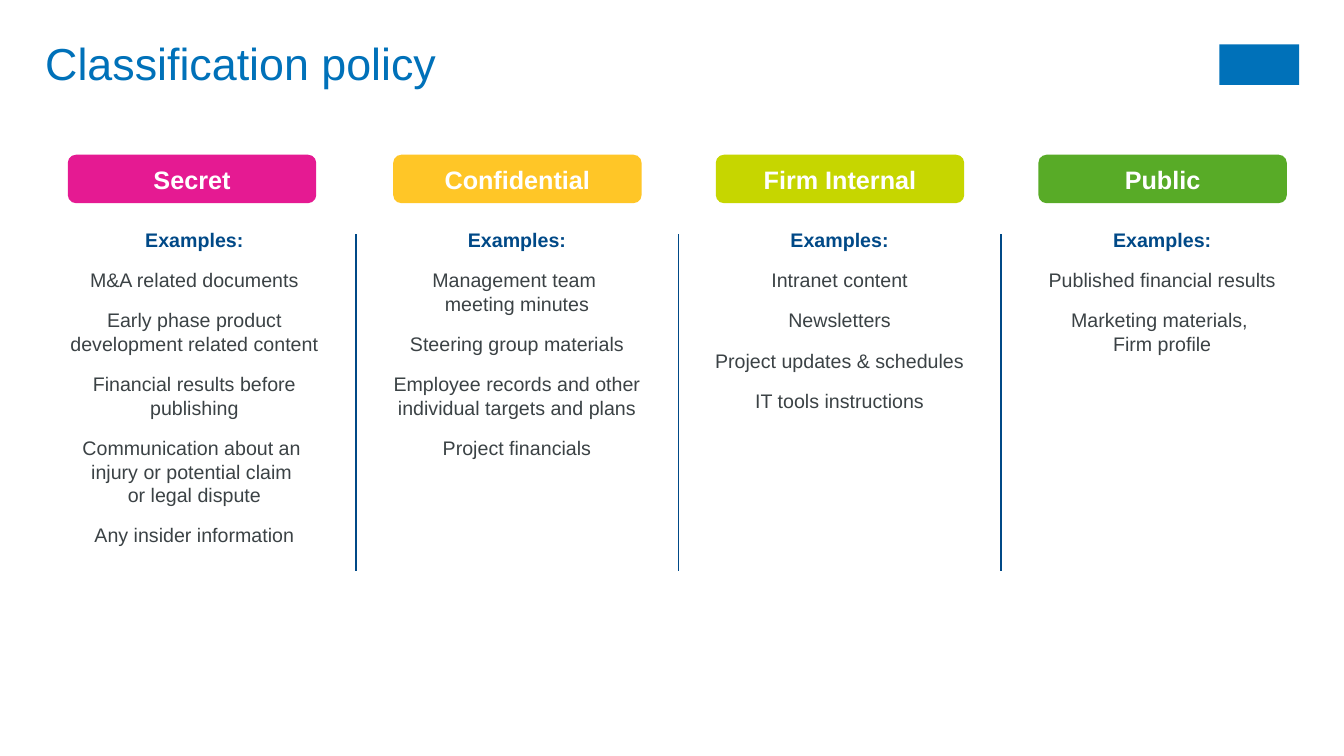
from copy import deepcopy

from lxml.etree import SubElement
from pptx import Presentation
from pptx.dml.color import RGBColor
from pptx.enum.shapes import MSO_CONNECTOR, MSO_SHAPE
from pptx.enum.text import MSO_ANCHOR, PP_ALIGN
from pptx.oxml.ns import qn
from pptx.util import Cm, Pt

COLORS = {
    "title": "0071B9",
    "navy": "004987",
    "text": "3B4245",
    "white": "FFFFFF",
    "secret": "E51A92",
    "confidential": "FFC627",
    "internal": "C6D600",
    "public": "58AB27",
}

# Label, colour, label left edge in cm, examples
CLASSES = [
    ("Secret", "secret", 1.71, [
        "M&A related documents",
        "Early phase product development related content",
        "Financial results before publishing",
        "Communication about an \ninjury or potential claim \nor legal dispute",
        "Any insider information",
    ]),
    ("Confidential", "confidential", 9.91, [
        "Management team \nmeeting minutes",
        "Steering group materials",
        "Employee records and other individual targets and plans",
        "Project financials",
    ]),
    ("Firm Internal", "internal", 18.04, [
        "Intranet content",
        "Newsletters",
        "Project updates & schedules",
        "IT tools instructions",
    ]),
    ("Public", "public", 26.17, [
        "Published financial results",
        "Marketing materials, \nFirm profile",
    ]),
]
COLUMN_LEFT = 1.14
COLUMN_PITCH = 8.13
COLUMN_WIDTH = 7.52
LINE_HEIGHT = 0.6
PARAGRAPH_GAP = 0.42


def color(name):
    return RGBColor.from_string(COLORS[name])


def write(paragraph, text, size, color_name, bold=False):
    paragraph.text = text
    for run in paragraph.runs:
        run.font.name = "Arial"
        run.font.size = Pt(size)
        run.font.bold = bold
        run.font.color.rgb = color(color_name)
    # Line breaks take the size of the text around them
    for line_break in paragraph._p.findall(qn("a:br")):
        line_break.append(deepcopy(paragraph.runs[0]._r.rPr))


presentation = Presentation()
presentation.slide_width = Cm(33.87)
presentation.slide_height = Cm(19.05)
slide = presentation.slides.add_slide(presentation.slide_layouts[6])

# Title
title = slide.shapes.add_textbox(Cm(1.14), Cm(1.12), Cm(28.8), Cm(2.39))
title_frame = title.text_frame
title_frame.word_wrap = True
title_frame.margin_left = title_frame.margin_right = 0
title_frame.margin_top = title_frame.margin_bottom = 0
title_frame.paragraphs[0].line_spacing = 0.85
write(title_frame.paragraphs[0], "Classification policy", 32, "title")

# Plain block in the top right corner
corner_block = slide.shapes.add_shape(
    MSO_SHAPE.RECTANGLE, Cm(30.73), Cm(1.12), Cm(2.01), Cm(1.02))
corner_block.shadow.inherit = False
corner_block.fill.solid()
corner_block.fill.fore_color.rgb = color("title")
corner_block.line.fill.background()

for index, (name, color_name, label_left, examples) in enumerate(CLASSES):
    left = COLUMN_LEFT + index * COLUMN_PITCH

    # Examples
    line_count = 1 + sum(1 + example.count("\n") for example in examples)
    height = line_count * LINE_HEIGHT + len(examples) * PARAGRAPH_GAP
    box = slide.shapes.add_textbox(
        Cm(left), Cm(5.61), Cm(COLUMN_WIDTH), Cm(height))
    frame = box.text_frame
    frame.word_wrap = True
    write(frame.paragraphs[0], "Examples:", 14, "navy", bold=True)
    for example in examples:
        write(frame.add_paragraph(), example, 14, "text")
    for paragraph in frame.paragraphs:
        paragraph.alignment = PP_ALIGN.CENTER
        paragraph.space_after = Pt(12)

    # Divider to the left of every column but the first
    if index:
        divider_x = Cm(left - 0.3)
        divider = slide.shapes.add_connector(
            MSO_CONNECTOR.STRAIGHT, divider_x, Cm(5.9), divider_x, Cm(14.4))
        divider.line.color.rgb = color("navy")
        divider.line.width = Pt(1.25)
        SubElement(divider._element.spPr, qn("a:effectLst"))

    # Class label
    label = slide.shapes.add_shape(
        MSO_SHAPE.ROUNDED_RECTANGLE,
        Cm(label_left), Cm(3.9), Cm(6.26), Cm(1.22))
    label.shadow.inherit = False
    label.fill.solid()
    label.fill.fore_color.rgb = color(color_name)
    label.line.fill.background()
    label.text_frame.vertical_anchor = MSO_ANCHOR.MIDDLE
    label_paragraph = label.text_frame.paragraphs[0]
    write(label_paragraph, name, 18, "white", bold=True)
    label_paragraph.alignment = PP_ALIGN.CENTER

presentation.save("out.pptx")
